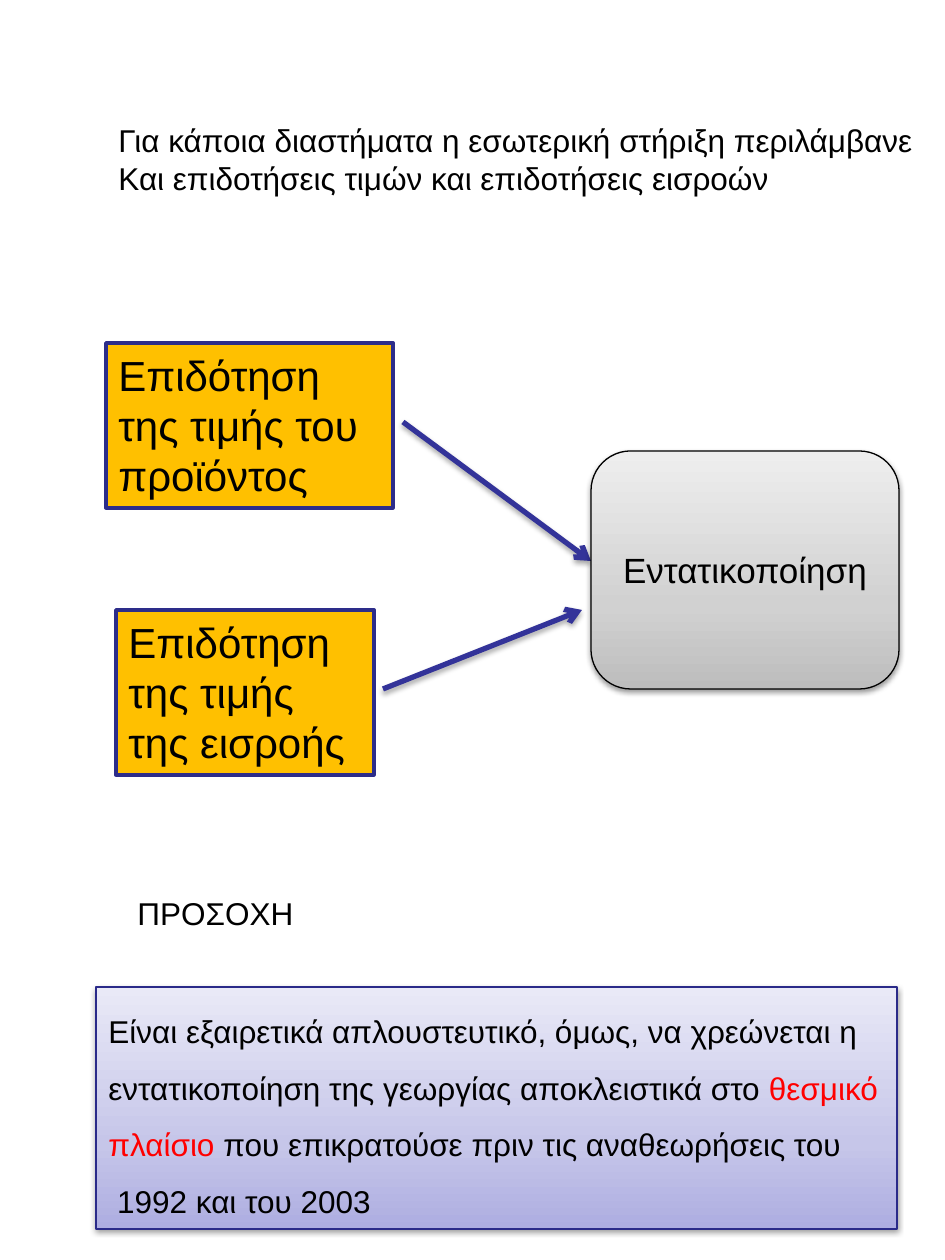
from dataclasses import dataclass

from lxml.etree import SubElement
from pptx import Presentation
from pptx.dml.color import RGBColor
from pptx.enum.shapes import MSO_CONNECTOR, MSO_SHAPE
from pptx.enum.text import MSO_ANCHOR, PP_ALIGN
from pptx.oxml.ns import qn
from pptx.util import Emu, Pt

PX_PER_INCH = 126
COLORS = {
    "text": "000000",
    "warning": "FF0000",
    "subsidy": "FFC000",
    "subsidy_line": "2D2D8A",
    "arrow": "333399",
    "outcome_line": "000000",
    "caution_line": "2A2A89",
    "shadow": "000000",
}
GREY_STOPS = ((0, "BDBDBD"), (35, "D1D1D1"), (100, "EEEEEE"))
LILAC_STOPS = ((0, "ADADE1"), (35, "C6C6E9"), (100, "E9E9F7"))


@dataclass(frozen=True)
class Box:
    left: int
    top: int
    width: int
    height: int

    def emu(self) -> tuple:
        return tuple(px(n) for n in (self.left, self.top, self.width, self.height))


@dataclass(frozen=True)
class Subsidy:
    box: Box
    label: str
    arrow_start: tuple[int, int]
    arrow_end: tuple[int, int]


SUBSIDIES = (
    Subsidy(Box(106, 343, 287, 165), "Επιδότηση της τιμής του προϊόντος", (403, 422), (591, 561)),
    Subsidy(Box(116, 610, 258, 165), "Επιδότηση της τιμής της εισροής", (383, 689), (582, 610)),
)
INTRO = (
    (("Για κάποια διαστήματα η εσωτερική στήριξη περιλάμβανε", "text"),),
    (("Και επιδοτήσεις τιμών και επιδοτήσεις εισροών", "text"),),
)
CAUTION = (
    (("Είναι εξαιρετικά απλουστευτικό, όμως, να χρεώνεται η", "text"),),
    (("εντατικοποίηση της γεωργίας αποκλειστικά στο ", "text"), ("θεσμικό", "warning")),
    (("πλαίσιο", "warning"), (" που επικρατούσε πριν τις αναθεωρήσεις του", "text")),
    ((" 1992 και του 2003", "text"),),
)


def px(length: int) -> Emu:
    return Emu(round(length * 914400 / PX_PER_INCH))


def rgb(name: str) -> RGBColor:
    return RGBColor.from_string(COLORS[name])


def write(shape, paragraphs, *, size: int = 18, align=PP_ALIGN.LEFT,
          anchor=MSO_ANCHOR.TOP, wrap: bool = True, spacing: float = 1.0) -> None:
    """Write paragraphs, each a sequence of (text, colour name) runs."""
    frame = shape.text_frame
    frame.word_wrap = wrap
    frame.vertical_anchor = anchor
    for index, runs in enumerate(paragraphs):
        paragraph = frame.paragraphs[0] if index == 0 else frame.add_paragraph()
        paragraph.alignment = align
        paragraph.line_spacing = spacing
        for text, color in runs:
            run = paragraph.add_run()
            run.text = text
            run.font.name = "Arial"
            run.font.size = Pt(size)
            run.font.color.rgb = rgb(color)


def add_shadow(effects, opacity: int, distance: int) -> None:
    shadow = SubElement(effects, qn("a:outerShdw"), blurRad="40000", dist=str(distance),
                        dir="5400000", rotWithShape="0")
    color = SubElement(shadow, qn("a:srgbClr"), val=COLORS["shadow"])
    SubElement(color, qn("a:alpha"), val=str(opacity * 1000))


def add_panel(slide, kind, box: Box, line: str, line_width: float):
    panel = slide.shapes.add_shape(kind, *box.emu())
    panel.line.color.rgb = rgb(line)
    panel.line.width = Pt(line_width)
    panel.shadow.inherit = False
    return panel


def add_gradient_panel(slide, kind, box: Box, line: str, stops):
    """Add a shadowed panel whose gradient runs from bottom to top."""
    panel = add_panel(slide, kind, box, line, 0.75)
    panel.fill.gradient()
    panel.fill.gradient_angle = 90
    properties = panel.element.spPr
    stop_list = properties.find(".//" + qn("a:gsLst"))
    for stop in list(stop_list):
        stop_list.remove(stop)
    for position, color in stops:
        stop = SubElement(stop_list, qn("a:gs"), pos=str(position * 1000))
        SubElement(stop, qn("a:srgbClr"), val=color)
    add_shadow(properties.find(qn("a:effectLst")), 38, 20000)
    return panel


def add_arrow(slide, start: tuple[int, int], end: tuple[int, int]) -> None:
    arrow = slide.shapes.add_connector(
        MSO_CONNECTOR.STRAIGHT, *(px(n) for n in (*start, *end)))
    arrow.line.color.rgb = rgb("arrow")
    arrow.line.width = Pt(3)
    properties = arrow.element.spPr
    SubElement(properties.find(qn("a:ln")), qn("a:tailEnd"), type="arrow")
    add_shadow(SubElement(properties, qn("a:effectLst")), 35, 23000)


def main() -> None:
    deck = Presentation()
    deck.slide_width, deck.slide_height = px(945), px(1260)
    slide = deck.slides.add_slide(deck.slide_layouts[6])

    for subsidy in SUBSIDIES:
        panel = add_panel(slide, MSO_SHAPE.RECTANGLE, subsidy.box, "subsidy_line", 2)
        panel.fill.solid()
        panel.fill.fore_color.rgb = rgb("subsidy")
        write(panel, [[(subsidy.label, "text")]], size=24)
    for subsidy in SUBSIDIES:
        add_arrow(slide, subsidy.arrow_start, subsidy.arrow_end)

    outcome = add_gradient_panel(slide, MSO_SHAPE.ROUNDED_RECTANGLE,
                                 Box(591, 451, 308, 238), "outcome_line", GREY_STOPS)
    write(outcome, [[("Εντατικοποίηση", "text")]], size=20,
          align=PP_ALIGN.CENTER, anchor=MSO_ANCHOR.MIDDLE)

    intro = slide.shapes.add_textbox(*Box(106, 115, 827, 89).emu())
    write(intro, INTRO, wrap=False)
    heading = slide.shapes.add_textbox(*Box(125, 888, 183, 50).emu())
    write(heading, [[("ΠΡΟΣΟΧΗ", "text")]], wrap=False)

    caution = add_gradient_panel(slide, MSO_SHAPE.RECTANGLE,
                                 Box(96, 987, 801, 242), "caution_line", LILAC_STOPS)
    write(caution, CAUTION, wrap=False, spacing=1.5)

    deck.save("out.pptx")


if __name__ == "__main__":
    main()
